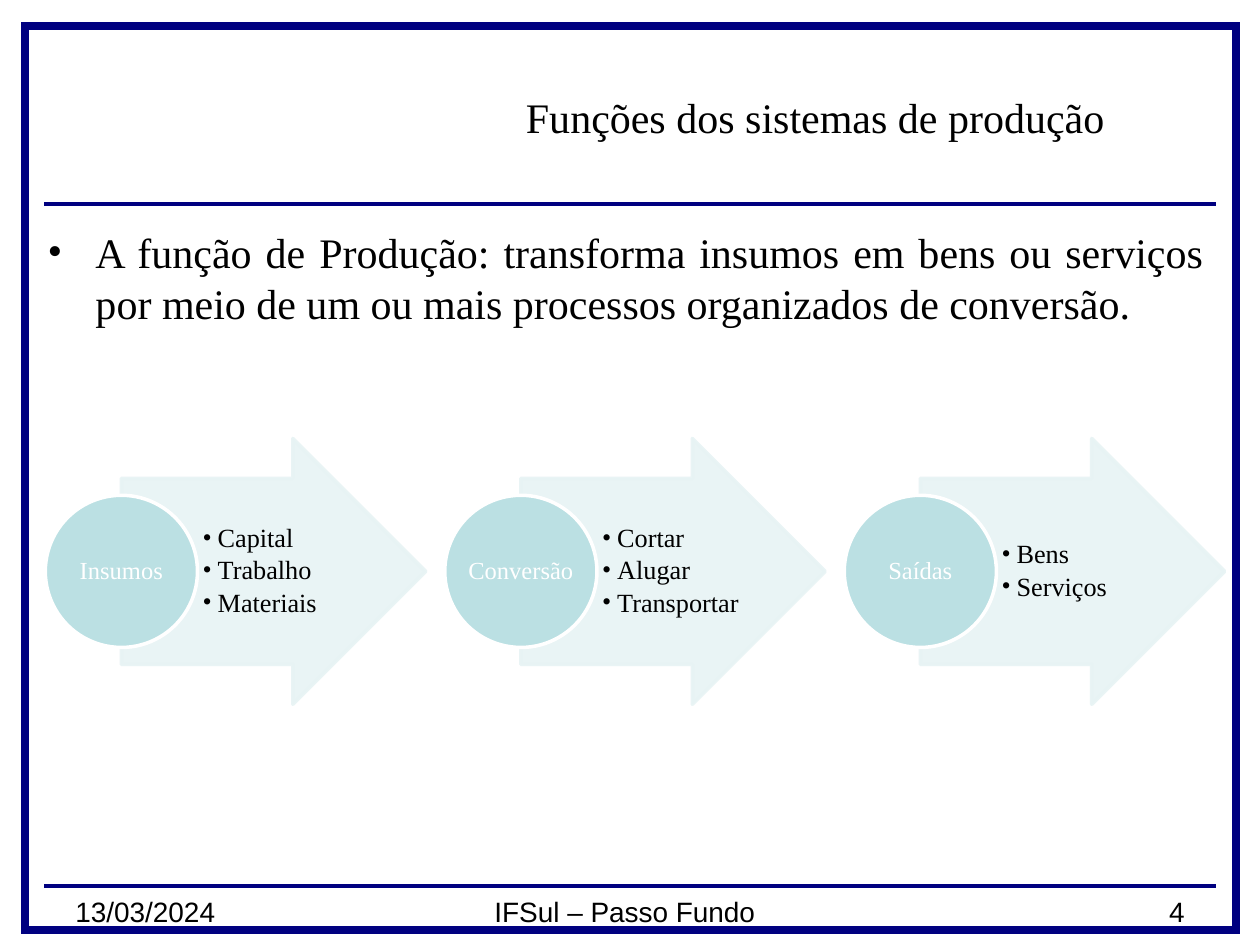
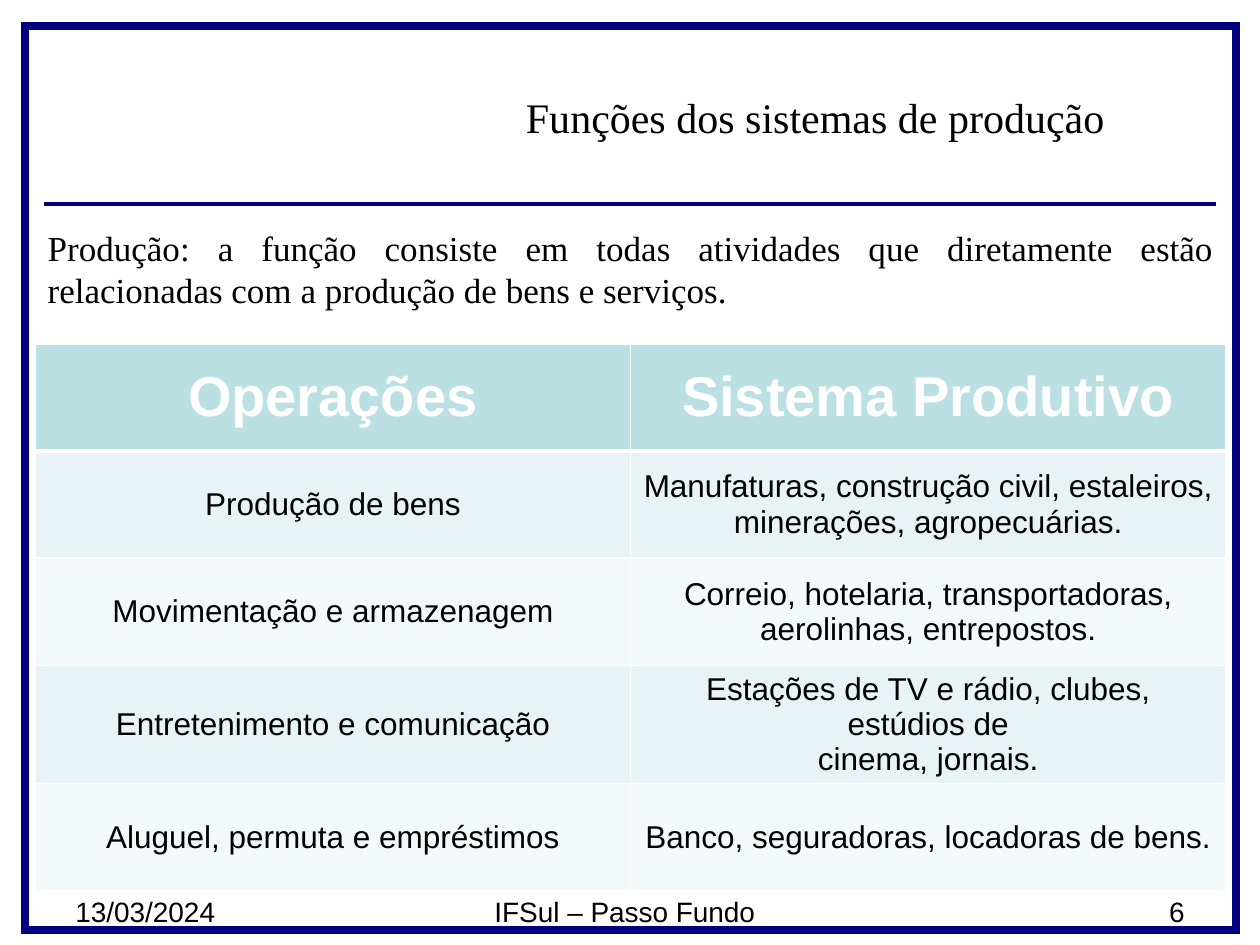
from dataclasses import dataclass

from pptx import Presentation
from pptx.dml.color import RGBColor
from pptx.enum.shapes import MSO_CONNECTOR, MSO_SHAPE
from pptx.enum.text import MSO_ANCHOR, PP_ALIGN
from pptx.oxml.ns import qn
from pptx.util import Inches, Pt

NAVY, TEAL, MIST, PALE = "000080", "BBE0E3", "E7F3F4", "F3F9FA"
BLACK, WHITE = "000000", "FFFFFF"
SERIF, SANS = "Times New Roman", "Arial"
TITLE = "Funções dos sistemas de produção"
DATE, SCHOOL = "13/03/2024", "IFSul – Passo Fundo"
COLUMNS, ROWS = 100, 75  # page grid


@dataclass
class Box:
    left: float
    top: float
    width: float
    height: float

    def share(self, x, y, w, h):
        """Part of this box, given as shares of its size."""
        return Box(self.left + x * self.width, self.top + y * self.height,
                   w * self.width, h * self.height)

    def emu(self):
        return [Inches(v) for v in (self.left, self.top, self.width, self.height)]


PAGE = Box(0, 0, 10, 7.5)


def grid(column, row, columns, rows):
    return PAGE.share(column / COLUMNS, row / ROWS, columns / COLUMNS, rows / ROWS)


def color(hex_string):
    return RGBColor.from_string(hex_string)


def add_element(parent, tag, **attributes):
    element = parent.makeelement(qn(tag), attributes)
    parent.append(element)
    return element


def style_text(frame, size, font, ink, align=PP_ALIGN.LEFT, bold=False,
               bullet_indent=0, line_spacing=None, gap=0):
    for paragraph in frame.paragraphs:
        if bullet_indent:
            properties = paragraph._p.get_or_add_pPr()
            properties.set("marL", str(Inches(bullet_indent)))
            properties.set("indent", str(-Inches(bullet_indent)))
            add_element(properties, "a:buFont", typeface=font)
            add_element(properties, "a:buChar", char="•")
        paragraph.alignment = align
        if line_spacing:
            paragraph.line_spacing = line_spacing
        if gap:
            paragraph.space_after = Pt(gap)
        for run in paragraph.runs:
            run.font.size, run.font.name, run.font.bold = Pt(size), font, bold
            run.font.color.rgb = color(ink)


def set_frame(frame, text, anchor, margins, wrap=True):
    frame.text = text
    frame.word_wrap = wrap
    frame.vertical_anchor = anchor
    (frame.margin_left, frame.margin_top,
     frame.margin_right, frame.margin_bottom) = map(Inches, margins)


def add_text(slide, box, text, size, font, anchor=MSO_ANCHOR.TOP,
             margins=(0.1, 0.05, 0.1, 0.05), **style):
    frame = slide.shapes.add_textbox(*box.emu()).text_frame
    set_frame(frame, text, anchor, margins)
    style_text(frame, size, font, BLACK, **style)


def add_figure(slide, preset, box, fill, line, line_width, opacity=100):
    figure = slide.shapes.add_shape(preset, *box.emu())
    figure.shadow.inherit = False
    if fill:
        figure.fill.solid()
        figure.fill.fore_color.rgb = color(fill)
    else:
        figure.fill.background()
    figure.line.color.rgb = color(line)
    figure.line.width = Pt(line_width)
    if opacity < 100:
        for tint in figure._element.spPr.iter(qn("a:srgbClr")):
            add_element(tint, "a:alpha", val=str(opacity * 1000))
    return figure


def add_rule(slide, box):
    rule = slide.shapes.add_connector(
        MSO_CONNECTOR.STRAIGHT, Inches(box.left + box.width), Inches(box.top),
        Inches(box.left), Inches(box.top))
    rule.line.color.rgb = color(NAVY)
    rule.line.width = Pt(2.25)
    add_element(rule._element.spPr, "a:effectLst")


def new_slide(deck, number):
    """Frame, rules, title and footer shared by all slides."""
    slide = deck.slides.add_slide(deck.slide_layouts[6])
    border = add_figure(slide, MSO_SHAPE.RECTANGLE, grid(2, 2.1, 96.1, 71.7),
                        None, NAVY, 4.5)
    # Square corners
    add_element(border._element.spPr.find(qn("a:ln")), "a:miter", lim="800000")
    for row in (16.2, 70.3):
        add_rule(slide, grid(3.5, row, 93, 0))
    add_text(slide, grid(34.4, 3, 60.6, 12.5), TITLE, 24, SERIF,
             MSO_ANCHOR.MIDDLE, align=PP_ALIGN.CENTER)
    for column, columns, text, align in (
            (5, 23.3, DATE, PP_ALIGN.LEFT),
            (21.1, 57, SCHOOL, PP_ALIGN.CENTER),
            (86.7, 8.3, str(number), PP_ALIGN.RIGHT)):
        add_text(slide, grid(column, 70.5, columns, 4.5), text, 16, SANS, align=align)
    return slide


def add_stage(slide, box, name, items):
    """One arrow with its named circle and bulleted items."""
    add_figure(slide, MSO_SHAPE.RIGHT_ARROW, box.share(0.2, 0, 0.8, 1),
               MIST, MIST, 2, opacity=90).adjustments[0] = 0.7
    add_text(slide, box.share(0.4, 0.15, 0.39, 0.7), "\n".join(items), 15, SERIF,
             MSO_ANCHOR.MIDDLE, (0.04, 0.01, 0.02, 0.01),
             bullet_indent=0.12, line_spacing=0.9, gap=2.25)
    diameter = 0.4 * box.width
    circle_box = Box(box.left, box.top + (box.height - diameter) / 2, diameter, diameter)
    circle = add_figure(slide, MSO_SHAPE.OVAL, circle_box, TEAL, WHITE, 2)
    set_frame(circle.text_frame, name, MSO_ANCHOR.MIDDLE, (0.01,) * 4, wrap=False)
    style_text(circle.text_frame, 14, SERIF, WHITE, PP_ALIGN.CENTER, line_spacing=0.9)


def add_process(slide, box, stages):
    """Row of equal stages; each gap is a twentieth of a stage."""
    gap = 0.05
    stage_share = 1 / (len(stages) + gap * (len(stages) - 1))
    step = stage_share * (1 + gap)
    for index, (name, items) in enumerate(stages):
        add_stage(slide, box.share(index * step, 0, stage_share, 1), name, items)


def add_cell_borders(cell, bottom_width):
    properties = cell._tc.get_or_add_tcPr()
    for side, width in (("L", 1), ("R", 1), ("T", 1), ("B", bottom_width)):
        border = add_element(properties, f"a:ln{side}", w=str(Pt(width)))
        add_element(add_element(border, "a:solidFill"), "a:srgbClr", val=WHITE)


def add_operations_table(slide, box, rows):
    table = slide.shapes.add_table(len(rows), len(rows[0]), *box.emu()).table
    for row_index, row in enumerate(rows):
        header = row_index == 0
        band = TEAL if header else (MIST if row_index % 2 else PALE)
        for column_index, text in enumerate(row):
            cell = table.cell(row_index, column_index)
            cell.text_frame.text = text
            cell.vertical_anchor = MSO_ANCHOR.MIDDLE
            cell.margin_top = cell.margin_bottom = Inches(0.02)
            add_cell_borders(cell, 3 if header else 1)
            cell.fill.solid()
            cell.fill.fore_color.rgb = color(band)
            style_text(cell.text_frame, 32 if header else 18, SANS,
                       WHITE if header else BLACK, PP_ALIGN.CENTER, bold=header)


def build_process_slide(deck):
    slide = new_slide(deck, 4)
    add_text(slide, grid(2.8, 17.5, 93.7, 11.3),
             "A função de Produção: transforma insumos em bens ou serviços por meio "
             "de um ou mais processos organizados de conversão.",
             24, SERIF, align=PP_ALIGN.JUSTIFY, bullet_indent=0.38)
    add_process(slide, grid(3.6, 34.8, 93.6, 21.1), [
        ("Insumos", ["Capital", "Trabalho", "Materiais"]),
        ("Conversão", ["Cortar", "Alugar", "Transportar"]),
        ("Saídas", ["Bens", "Serviços"]),
    ])


def build_operations_slide(deck):
    slide = new_slide(deck, 6)
    add_text(slide, grid(2.8, 17.5, 94.5, 12.1),
             "Produção: a função consiste em todas atividades que diretamente estão "
             "relacionadas com a produção de bens e serviços.",
             20, SERIF, align=PP_ALIGN.JUSTIFY)
    add_operations_table(slide, grid(2.8, 27.3, 94.5, 42.5), [
        ("Operações", "Sistema Produtivo"),
        ("Produção de bens",
         "Manufaturas, construção civil, estaleiros,\nminerações, agropecuárias."),
        ("Movimentação e armazenagem",
         "Correio, hotelaria, transportadoras, aerolinhas, entrepostos."),
        ("Entretenimento e comunicação",
         "Estações de TV e rádio, clubes, estúdios de\ncinema, jornais."),
        ("Aluguel, permuta e empréstimos", "Banco, seguradoras, locadoras de bens."),
    ])


def main():
    deck = Presentation()
    deck.slide_width, deck.slide_height = Inches(PAGE.width), Inches(PAGE.height)
    build_process_slide(deck)
    build_operations_slide(deck)
    deck.save("out.pptx")


if __name__ == "__main__":
    main()
